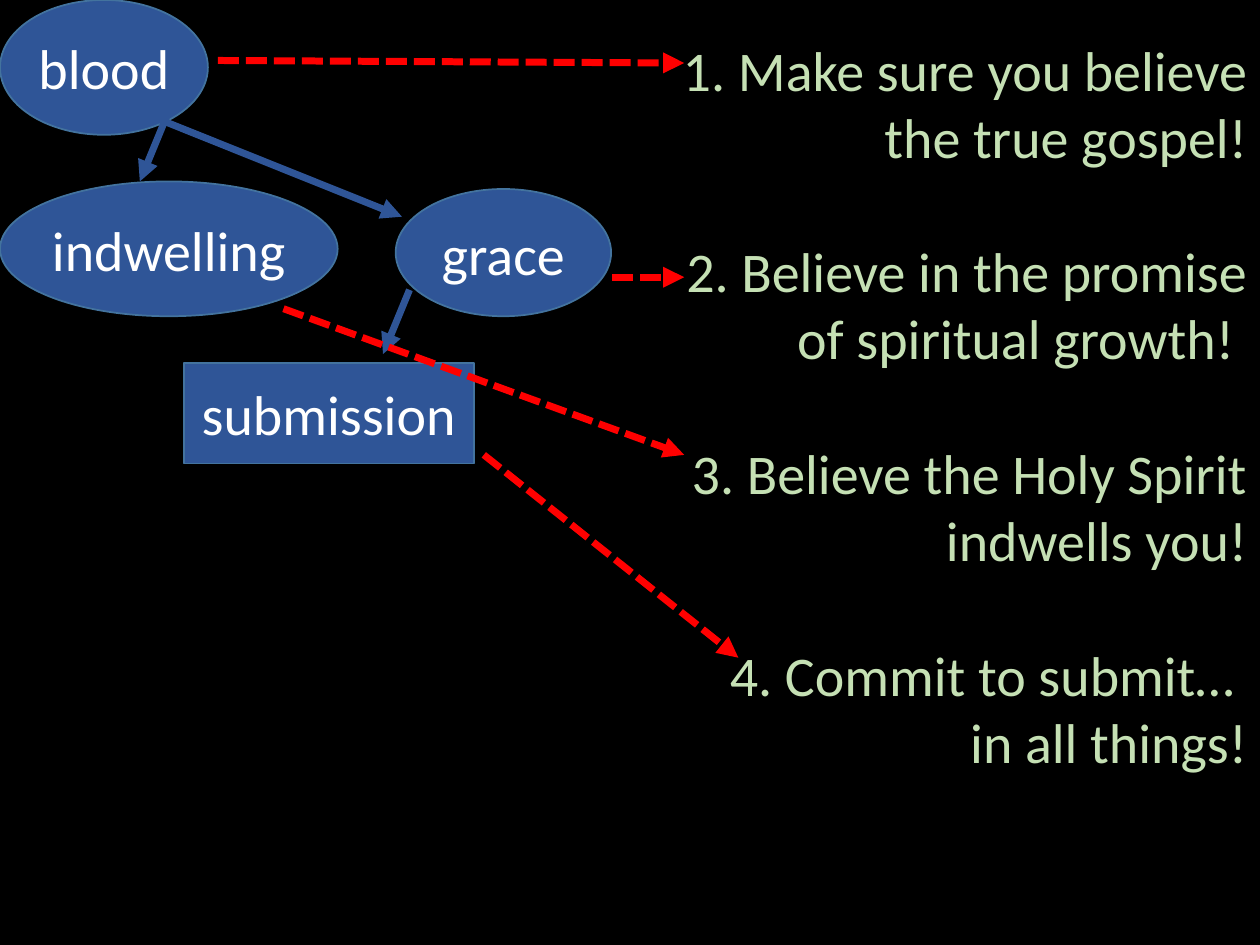
from pptx import Presentation
from pptx.dml.color import RGBColor
from pptx.enum.dml import MSO_LINE
from pptx.enum.shapes import MSO_CONNECTOR, MSO_SHAPE
from pptx.enum.text import MSO_ANCHOR, PP_ALIGN
from pptx.oxml.ns import qn
from pptx.util import Pt
from lxml import etree

PX = 9144
OVAL, RECT = MSO_SHAPE.OVAL, MSO_SHAPE.RECTANGLE
LINE = MSO_CONNECTOR.STRAIGHT
DASH = MSO_LINE.SQUARE_DOT
MID = MSO_ANCHOR.MIDDLE
MIDDLE, RIGHT = PP_ALIGN.CENTER, PP_ALIGN.RIGHT
COLORS = {
    "back": "000000",
    "node": "2F5597",
    "edge": "43739E",
    "label": "FFFFFF",
    "step": "C5E0B4",
    "link": "FF0000",
}
HUES = {name: RGBColor.from_string(code) for name, code in COLORS.items()}


def write(para, text, hue, align, gap=0):
    para.alignment = align
    para.space_before = Pt(gap)
    run = para.add_run()
    run.text = text
    run.font.name = "Calibri"
    run.font.size = Pt(32)
    run.font.color.rgb = HUES[hue]


def arrow(ends, hue, dash=None):
    link = slide.shapes.add_connector(LINE, *[n * PX for n in ends])
    link.line.color.rgb = HUES[hue]
    link.line.width = Pt(4)
    if dash:
        link.line.dash_style = dash
    etree.SubElement(link.line._get_or_add_ln(), qn("a:tailEnd"), type="triangle")
    etree.SubElement(link._element.spPr, qn("a:effectLst"))


deck = Presentation()
deck.slide_width, deck.slide_height = 1000 * PX, 750 * PX
slide = deck.slides.add_slide(deck.slide_layouts[6])
slide.background.fill.solid()
slide.background.fill.fore_color.rgb = HUES["back"]

nodes = [
    ("submission", RECT, (146, 288, 230, 80)),
    ("indwelling", OVAL, (0, 144, 268, 107)),
    ("blood", OVAL, (0, 0, 165, 107)),
    ("grace", OVAL, (314, 150, 171, 101)),
]
for text, kind, area in nodes:
    node = slide.shapes.add_shape(kind, *[n * PX for n in area])
    node.shadow.inherit = False
    node.fill.solid()
    node.fill.fore_color.rgb = HUES["node"]
    node.line.color.rgb = HUES["edge"]
    node.line.width = Pt(1)
    frame = node.text_frame
    frame.vertical_anchor = MID
    if kind == OVAL:
        frame.margin_left = frame.margin_right = 0
        frame.margin_top = frame.margin_bottom = 0
    write(frame.paragraphs[0], text, "label", MIDDLE)

for ends in [(132, 93, 111, 144), (132, 97, 319, 172), (325, 230, 304, 281)]:
    arrow(ends, "node")

steps = [
    ["1. Make sure you believe the true gospel!"],
    ["2. Believe in the promise", "of spiritual growth! "],
    ["3. Believe the Holy Spirit", "indwells you!"],
    ["4. Commit to submit… ", "in all things!"],
]
box = slide.shapes.add_textbox(530 * PX, 23 * PX, 470 * PX, 656 * PX)
frame = box.text_frame
frame.word_wrap = True
for i, step in enumerate(steps):
    for j, text in enumerate(step):
        para = frame.add_paragraph() if i or j else frame.paragraphs[0]
        write(para, text, "step", RIGHT, gap=38.4 if i and not j else 0)

for ends in [
    (173, 48, 543, 50),
    (486, 220, 543, 220),
    (384, 361, 586, 522),
    (225, 245, 543, 361),
]:
    arrow(ends, "link", DASH)

deck.save("out.pptx")
